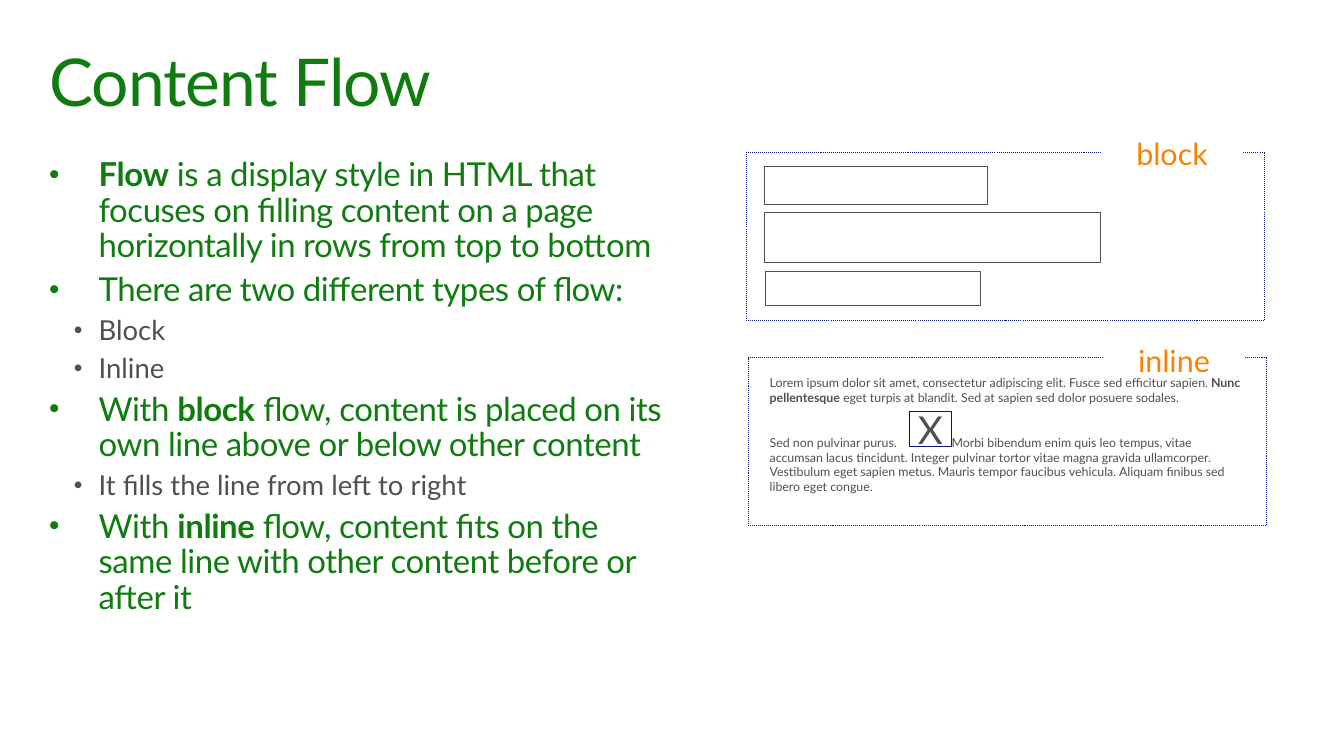
from lxml.etree import SubElement
from pptx import Presentation
from pptx.dml.color import RGBColor
from pptx.enum.dml import MSO_LINE_DASH_STYLE as Dash
from pptx.enum.shapes import MSO_SHAPE as Shape
from pptx.enum.text import MSO_ANCHOR as Anchor, MSO_AUTO_SIZE as AutoSize, PP_ALIGN as Align
from pptx.oxml.ns import qn
from pptx.util import Inches, Pt

GREEN = RGBColor(0x10, 0x7C, 0x10)
GRAY = RGBColor(0x50, 0x50, 0x50)
NAVY = RGBColor(0x09, 0x15, 0x7C)
ORANGE = RGBColor(0xFF, 0x80, 0x00)
WHITE = RGBColor(0xFF, 0xFF, 0xFF)
FONT = "Lato"

# Each bullet: level, then text with ** around the bold words
BULLETS = [
    (1, "**Flow** is a display style in HTML that focuses on filling content on a page "
        "horizontally in rows from top to bottom"),
    (1, "There are two different types of flow:"),
    (2, "Block"),
    (2, "Inline"),
    (1, "With **block** flow, content is placed on its own line above or below other content"),
    (2, "It fills the line from left to right"),
    (1, "With **inline** flow, content fits on the same line with other content before or after it"),
]
LEVELS = {
    1: dict(size=24, color=GREEN, tracking=-0.3, hanging=0.5),
    2: dict(size=20, color=GRAY, hanging=0.25),
}
INLINE_TEXT = [
    "Lorem ipsum dolor sit amet, consectetur adipiscing elit. Fusce sed efficitur sapien. "
    "**Nunc pellentesque **eget turpis at blandit. Sed at sapien sed dolor posuere sodales.",
    "Sed non pulvinar purus.\tMorbi bibendum enim quis leo tempus, vitae accumsan lacus "
    "tincidunt. Integer pulvinar tortor vitae magna gravida ullamcorper. Vestibulum eget "
    "sapien metus. Mauris tempor faucibus vehicula. Aliquam finibus sed libero eget congue.",
]


def write(paragraph, text, size, color, tracking=0, align=Align.LEFT,
          line_spacing=None, before=0, hanging=0, tab=None):
    """Fill a paragraph; words between ** marks are bold."""
    paragraph.alignment = align
    paragraph.space_before = Pt(before)
    if line_spacing:
        paragraph.line_spacing = line_spacing
    properties = paragraph._p.get_or_add_pPr()
    if hanging:
        properties.set("marL", str(Inches(0.5)))
        properties.set("indent", str(-Inches(hanging)))
        SubElement(properties, qn("a:buSzPct"), val="90000")
        SubElement(properties, qn("a:buFont"), typeface="Arial")
        SubElement(properties, qn("a:buChar"), char="•")
    if tab:
        tabs = SubElement(properties, qn("a:tabLst"))
        SubElement(tabs, qn("a:tab"), pos=str(Inches(tab)), algn="l")
    for index, part in enumerate(text.split("**")):
        if not part:
            continue
        run = paragraph.add_run()
        run.text = part
        run.font.name = FONT
        run.font.size = Pt(size)
        run.font.bold = index % 2 == 1
        run.font.color.rgb = color
        if tracking:
            run._r.get_or_add_rPr().set("spc", str(round(tracking * 100)))


class FlowSlide:
    def __init__(self, presentation):
        self.slide = presentation.slides.add_slide(presentation.slide_layouts[5])

    def frame(self, shape, margins=(0.1, 0.05), anchor=Anchor.TOP, wrap=True):
        frame = shape.text_frame
        frame.auto_size = AutoSize.NONE
        frame.word_wrap = wrap
        frame.vertical_anchor = anchor
        frame.margin_left = frame.margin_right = Inches(margins[0])
        frame.margin_top = frame.margin_bottom = Inches(margins[1])
        return frame

    def title(self, text, left, top, width, height):
        title = self.slide.shapes.title
        title.left, title.top = Inches(left), Inches(top)
        title.width, title.height = Inches(width), Inches(height)
        frame = self.frame(title, margins=(0.1, 0.1))
        write(frame.paragraphs[0], text, 48, GREEN, tracking=-0.7, line_spacing=0.9)

    def text_box(self, left, top, width, height, items, margins=(0.1, 0.05)):
        """Each item is a text and its format."""
        box = self.slide.shapes.add_textbox(
            Inches(left), Inches(top), Inches(width), Inches(height))
        frame = self.frame(box, margins)
        for index, (text, style) in enumerate(items):
            paragraph = frame.add_paragraph() if index else frame.paragraphs[0]
            write(paragraph, text, **style)

    def rectangle(self, left, top, width, height, fill=None, line=None, dash=None):
        shape = self.slide.shapes.add_shape(
            Shape.RECTANGLE, Inches(left), Inches(top), Inches(width), Inches(height))
        shape.shadow.inherit = False
        if fill is None:
            shape.fill.background()
        else:
            shape.fill.solid()
            shape.fill.fore_color.rgb = fill
        if line is None:
            shape.line.fill.background()
        else:
            shape.line.color.rgb = line
            shape.line.width = Pt(0.75)
            if dash:
                shape.line.dash_style = dash
        return shape

    def panel(self, left, top):
        self.rectangle(left, top, 5.25, 1.7, line=NAVY, dash=Dash.ROUND_DOT)

    def panel_label(self, text, left, top):
        label = self.rectangle(left, top, 1.44, 0.43, fill=WHITE)
        write(self.frame(label).paragraphs[0], text, 22.2, ORANGE, align=Align.CENTER)


def main():
    presentation = Presentation()
    presentation.slide_width, presentation.slide_height = Inches(13.6), Inches(7.65)
    flow = FlowSlide(presentation)

    # Title and bullets
    flow.title("Content Flow", 0.4, 0.4, 12.8, 1)
    bullets = [(text, dict(LEVELS[level], line_spacing=0.9, before=6 if index else 0))
               for index, (level, text) in enumerate(BULLETS)]
    flow.text_box(0.4, 1.5, 6.4, 5.08, bullets, margins=(0.1, 0.1))

    # Block flow: stacked boxes
    flow.panel(7.55, 1.54)
    for left, top, width, height in [
        (7.74, 1.68, 2.25, 0.39), (7.74, 2.15, 3.4, 0.51), (7.75, 2.75, 2.17, 0.34),
    ]:
        flow.rectangle(left, top, width, height, line=GRAY)
    flow.panel_label("block", 11.14, 1.32)

    # Inline flow: a box within running text
    flow.panel(7.57, 3.62)
    flow.panel_label("inline", 11.16, 3.41)
    small = dict(size=9, color=GRAY)
    flow.text_box(7.69, 3.75, 4.97, 1.31, [
        (INLINE_TEXT[0], small),
        (INLINE_TEXT[1], dict(small, before=21.6, tab=1.84)),
    ])
    inline_box = flow.rectangle(9.2, 4.16, 0.43, 0.36, fill=WHITE, line=NAVY)
    frame = flow.frame(inline_box, margins=(0, 0), anchor=Anchor.MIDDLE, wrap=False)
    write(frame.paragraphs[0], "X", 28, GRAY, align=Align.CENTER)

    presentation.save("out.pptx")


if __name__ == "__main__":
    main()
